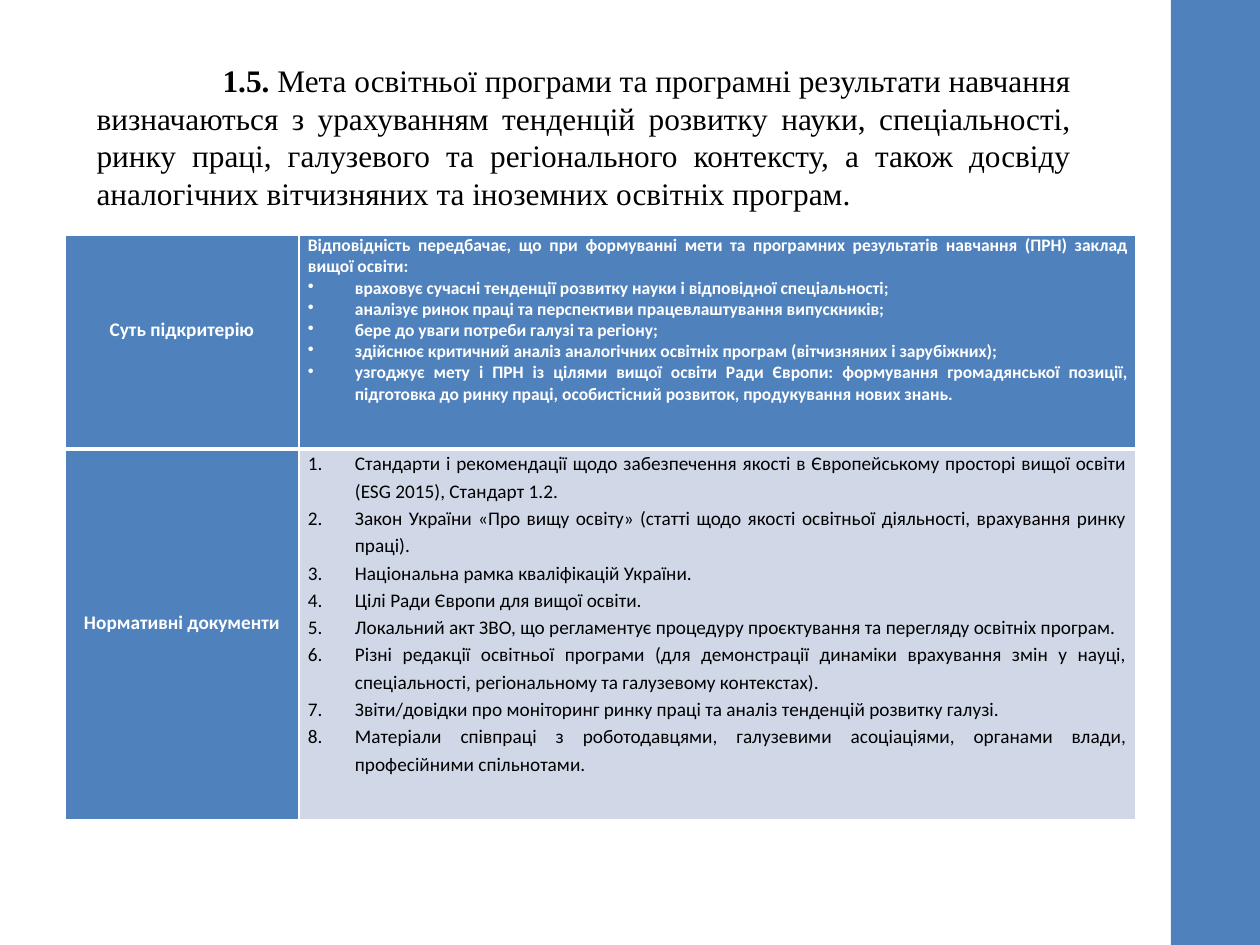
from lxml.etree import SubElement
from pptx import Presentation
from pptx.dml.color import RGBColor
from pptx.enum.shapes import MSO_SHAPE
from pptx.enum.text import MSO_ANCHOR, MSO_AUTO_SIZE, PP_ALIGN
from pptx.oxml.ns import qn
from pptx.util import Emu, Pt

COLORS = {"blue": "4F81BD", "pale": "D0D8E8", "white": "FFFFFF", "black": "000000"}
PX = 914400 // 126
SLIDE = (1260, 945)
BAR = (1171, 0, 89, 945)
TITLE_BOX = (84, 55, 1000, 169)
TABLE_BOX = (65, 235, 1071, 585)
COL_WIDTHS = (234, 837)
ROW_HEIGHTS = (214, 371)
CELL_MARGIN = 9
LABEL_LIFT = 27  # bottom margin that raises the row labels
HANGING = 47
TITLE_INDENT = 126

TITLE = [
    ("1.5. ", True),
    ("Мета освітньої програми та програмні результати навчання визначаються з урахуванням "
     "тенденцій розвитку науки, спеціальності, ринку праці, галузевого та регіонального "
     "контексту, а також досвіду аналогічних вітчизняних та іноземних освітніх програм.", False),
]
ROWS = [
    {
        "label": "Суть підкритерію",
        "intro": ["Відповідність передбачає, що при формуванні мети та програмних результатів "
                  "навчання (ПРН) заклад вищої освіти:"],
        "items": [
            "враховує сучасні тенденції розвитку науки і відповідної спеціальності;",
            "аналізує ринок праці та перспективи працевлаштування випускників;",
            "бере до уваги потреби галузі та регіону;",
            "здійснює критичний аналіз аналогічних освітніх програм (вітчизняних і зарубіжних);",
            "узгоджує мету і ПРН із цілями вищої освіти Ради Європи: формування громадянської "
            "позиції, підготовка до ринку праці, особистісний розвиток, продукування нових знань.",
        ],
        "bullet": ("a:buChar", {"char": "•"}),
        "size": 10, "bold": True, "color": "white", "fill": "blue", "spacing": 1.0,
    },
    {
        "label": "Нормативні документи",
        "intro": [],
        "items": [
            "Стандарти і рекомендації щодо забезпечення якості в Європейському просторі вищої "
            "освіти (ESG 2015), Стандарт 1.2.",
            "Закон України «Про вищу освіту» (статті щодо якості освітньої діяльності, "
            "врахування ринку праці).",
            "Національна рамка кваліфікацій України.",
            "Цілі Ради Європи для вищої освіти.",
            "Локальний акт ЗВО, що регламентує процедуру проєктування та перегляду освітніх "
            "програм.",
            "Різні редакції освітньої програми (для демонстрації динаміки врахування змін у "
            "науці, спеціальності, регіональному та галузевому контекстах).",
            "Звіти/довідки про моніторинг ринку праці та аналіз тенденцій розвитку галузі.",
            "Матеріали співпраці з роботодавцями, галузевими асоціаціями, органами влади, "
            "професійними спільнотами.",
        ],
        "bullet": ("a:buAutoNum", {"type": "arabicPeriod"}),
        "size": 11, "bold": False, "color": "black", "fill": "pale", "spacing": 1.15,
    },
]


def px(*values):
    return [Emu(v * PX) for v in values]


def rgb(name):
    return RGBColor.from_string(COLORS[name])


def set_font(font, name, size, color, bold=None):
    font.name, font.size, font.bold = name, Pt(size), bold
    font.color.rgb = rgb(color)


def set_indent(p, left, first):
    pPr = p._p.get_or_add_pPr()
    pPr.set("marL", str(left * PX))
    pPr.set("indent", str(first * PX))
    return pPr


def style_cell(cell, fill, top, bottom):
    """Set margins, white borders (top and bottom widths in points) and fill."""
    cell.margin_left, cell.margin_right = px(CELL_MARGIN, CELL_MARGIN)
    cell.margin_top = cell.margin_bottom = 0
    tcPr = cell._tc.get_or_add_tcPr()
    for side, width in (("L", 1), ("R", 1), ("T", top), ("B", bottom)):
        ln = SubElement(tcPr, qn(f"a:ln{side}"), w=str(Pt(width)))
        SubElement(SubElement(ln, qn("a:solidFill")), qn("a:srgbClr"), val=COLORS["white"])
    cell.fill.solid()
    cell.fill.fore_color.rgb = rgb(fill)


def fill_label(cell, text):
    cell.vertical_anchor = MSO_ANCHOR.MIDDLE
    cell.margin_bottom = px(LABEL_LIFT)[0]
    p = cell.text_frame.paragraphs[0]
    p.text, p.alignment, p.line_spacing = text, PP_ALIGN.CENTER, 1.15
    set_font(p.font, "Calibri", 11, "white", True)


def fill_details(cell, row):
    texts = row["intro"] + row["items"]
    tf = cell.text_frame
    for i, text in enumerate(texts):
        p = tf.add_paragraph() if i else tf.paragraphs[0]
        p.text, p.alignment, p.line_spacing = text, PP_ALIGN.JUSTIFY, row["spacing"]
        if i >= len(row["intro"]):
            tag, attrs = row["bullet"]
            SubElement(set_indent(p, HANGING, -HANGING), qn(tag), attrs)
        set_font(p.font, "Calibri", row["size"], row["color"], row["bold"])


prs = Presentation()
prs.slide_width, prs.slide_height = px(*SLIDE)
s = prs.slides.add_slide(prs.slide_layouts[5])

title = s.shapes.title
title.left, title.top, title.width, title.height = px(*TITLE_BOX)
tf = title.text_frame
tf.word_wrap, tf.auto_size, tf.vertical_anchor = True, MSO_AUTO_SIZE.NONE, MSO_ANCHOR.TOP
p = tf.paragraphs[0]
p.alignment = PP_ALIGN.JUSTIFY
set_indent(p, 0, TITLE_INDENT)
set_font(p.font, "Times New Roman", 17.9, "black")
for text, bold in TITLE:
    r = p.add_run()
    r.text, r.font.bold = text, bold

bar = s.shapes.add_shape(MSO_SHAPE.RECTANGLE, *px(*BAR))
bar.shadow.inherit = False
bar.fill.solid()
bar.fill.fore_color.rgb = rgb("blue")
bar.line.fill.background()

table = s.shapes.add_table(len(ROWS), len(COL_WIDTHS), *px(*TABLE_BOX)).table
for column, width in zip(table.columns, px(*COL_WIDTHS)):
    column.width = width
for i, (row, height) in enumerate(zip(ROWS, px(*ROW_HEIGHTS))):
    table.rows[i].height = height
    label, details = table.rows[i].cells
    top, bottom = (1, 3) if i == 0 else (3, 1)
    style_cell(label, "blue", top, bottom)
    style_cell(details, row["fill"], top, bottom)
    fill_label(label, row["label"])
    fill_details(details, row)

prs.save("out.pptx")
